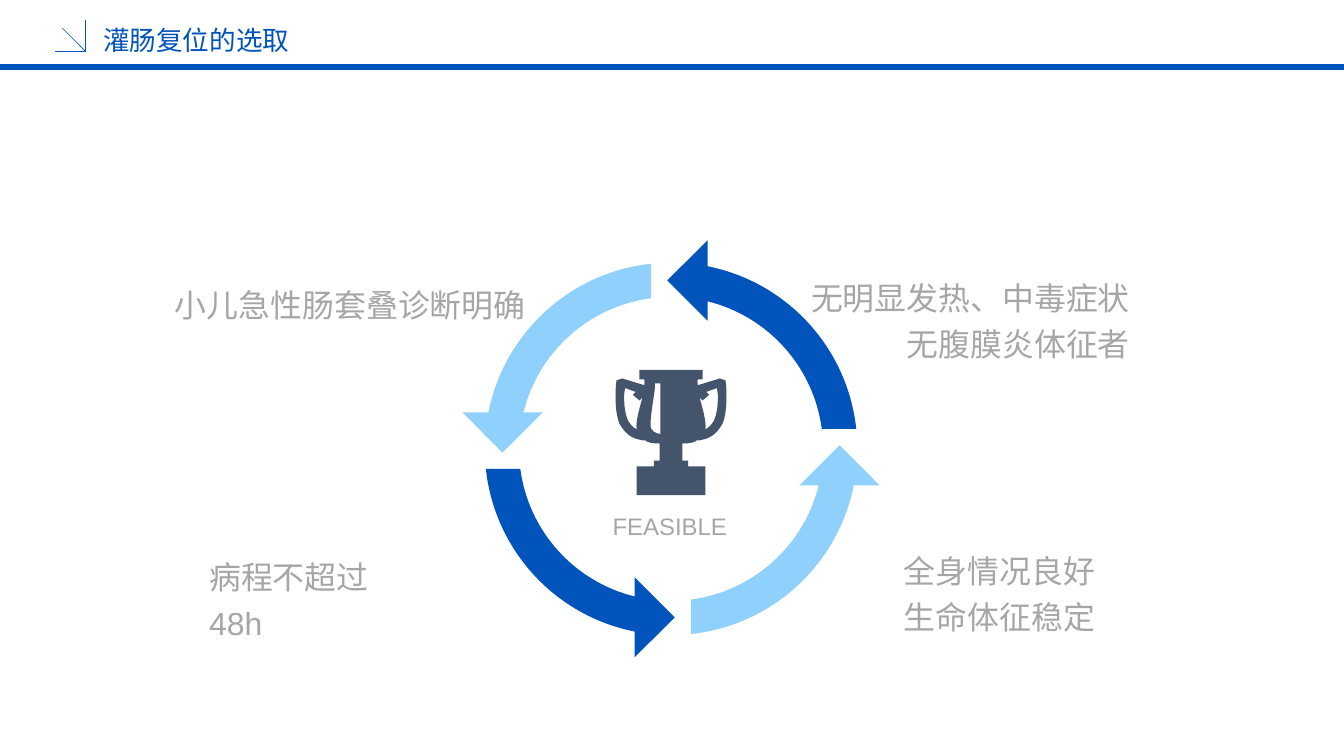
import math

import pptx
import pptx.dml.color
import pptx.enum.shapes
import pptx.enum.text
import pptx.oxml.ns
import pptx.util
from lxml import etree

Cm = pptx.util.Cm
Pt = pptx.util.Pt
qn = pptx.oxml.ns.qn
ALIGN = pptx.enum.text.PP_ALIGN
ANCHOR = pptx.enum.text.MSO_ANCHOR

COLORS = {"blue": "0154BC", "sky": "90D0FD", "slate": "44546A", "gray": "A6A6A6"}
FONT = "Arial"

RING = {"outer": 4.95, "inner": 4.04, "tail": 0.53, "head": 0.97}
ARROWHEAD = [(0.97, -3.41), (-0.1, -4.48), (0.97, -5.54)]
ARROW_TILT = 44.8

CUP_UNIT = Cm(0.0254)
CUP_HALF = [
    (-33, 0), (-33, 10), (-28, 10), (-28, 11, -27, 14, -28, 16),
    (-51, 9), (-57, 11), (-58, 16, -58, 23, -58, 29),
    (-58, 38, -57, 49, -54, 56), (-49, 65, -43, 71, -33, 73),
    (-31, 74, -30, 74, -28, 74), (-28, 73), (-25, 76, -20, 77, -12, 77),
    (-12, 95), (-18, 95), (-18, 101), (-36, 101), (-36, 131),
]
CUP_HANDLE = [
    (-30, 29), (-33, 41, -37, 53, -36, 62), (-39, 61, -42, 58, -45, 53),
    (-48, 46, -49, 38, -49, 29), (-49, 26, -49, 22, -48, 19),
    (-37, 23), (-40, 26), (-33, 32),
]
CUP_HIGHLIGHT = [
    (-11, 14), (-11, 67), (-11, 67, -18, 67, -21, 61),
    (-23, 55, -17, 23, -17, 20), (-17, 14),
]


def color(name):
    return pptx.dml.color.RGBColor.from_string(COLORS[name])


def add_line(slide, start, end, width):
    line = slide.shapes.add_connector(
        pptx.enum.shapes.MSO_CONNECTOR.STRAIGHT,
        Cm(start[0]), Cm(start[1]), Cm(end[0]), Cm(end[1]))
    line.line.color.rgb = color("blue")
    line.line.width = Pt(width)
    etree.SubElement(line._element.spPr, qn("a:effectLst"))


def pairs(step):
    return list(zip(step[::2], step[1::2]))


def join(points):
    return tuple(value for point in points for value in point)


def turn(point, degrees):
    angle = math.radians(degrees)
    x, y = point
    return (x * math.cos(angle) - y * math.sin(angle),
            x * math.sin(angle) + y * math.cos(angle))


def turn_steps(steps, degrees):
    return [join(turn(point, degrees) for point in pairs(step)) for step in steps]


def mirror(steps):
    mirrored = [(-steps[-1][-2], steps[-1][-1])]
    for previous, step in reversed(list(zip(steps, steps[1:]))):
        points = pairs(previous)[-1:] + pairs(step)[:-1]
        mirrored.append(join((-x, y) for x, y in reversed(points)))
    return mirrored


def round_curves(shape, contours):
    segments = iter(list(shape._element.spPr.iter(qn("a:lnTo"))))
    for contour in contours:
        for step in contour[1:]:
            group = [next(segments) for _ in pairs(step)]
            if len(group) == 1:
                continue
            curve = etree.Element(qn("a:cubicBezTo"))
            group[0].addprevious(curve)
            for segment in group:
                curve.append(segment[0])
                segment.getparent().remove(segment)


def add_outline(slide, center_x, top, contours, unit, fill, rotation=0):
    builder = None
    for contour in contours:
        points = [(round(x * unit), round(y * unit))
                  for step in turn_steps(contour, -rotation) for x, y in pairs(step)]
        if builder is None:
            builder = slide.shapes.build_freeform(*points[0], scale=1.0)
        else:
            builder.move_to(*points[0])
        builder.add_line_segments(points[1:])
    shape = builder.convert_to_shape(Cm(center_x), Cm(top))
    round_curves(shape, contours)
    middle = (shape.left + shape.width / 2 - Cm(center_x),
              shape.top + shape.height / 2 - Cm(top))
    x, y = turn(middle, rotation)
    shape.left += round(x - middle[0])
    shape.top += round(y - middle[1])
    shape.rotation = rotation
    shape.shadow.inherit = False
    shape.fill.solid()
    shape.fill.fore_color.rgb = color(fill)
    shape.line.fill.background()


def add_text(slide, box, lines, size, fill="gray", align=ALIGN.LEFT,
             wrap=False, anchor=ANCHOR.TOP):
    frame = slide.shapes.add_textbox(*(Cm(length) for length in box)).text_frame
    frame.word_wrap = wrap
    frame.vertical_anchor = anchor
    frame.margin_left = frame.margin_right = Cm(0.28)
    frame.margin_top = frame.margin_bottom = Cm(0.14)
    frame.text = "\n".join(lines)
    for paragraph in frame.paragraphs:
        paragraph.alignment = align
        paragraph.line_spacing = 1.2
        paragraph.font.name = FONT
        paragraph.font.size = Pt(size)
        paragraph.font.color.rgb = color(fill)


def arc(radius, first, last):
    reach = 4 / 3 * math.tan((last - first) / 4)
    start, end = [(radius * math.sin(angle), -radius * math.cos(angle))
                  for angle in (first, last)]
    return [start, (start[0] - reach * start[1], start[1] + reach * start[0],
                    end[0] + reach * end[1], end[1] - reach * end[0], *end)]


def arc_angles(radius):
    return math.asin(RING["head"] / radius), math.acos(RING["tail"] / radius)


def add_header(slide, left, top, width, height):
    base = top + height
    add_line(slide, (left, base), (left + width, base), 4.5)
    corner = (left + 2.28, top + 1.37)
    for start_x, start_y in [(1.45, 1.37), (2.28, 0.52), (1.65, 0.74)]:
        add_line(slide, (left + start_x, top + start_y), corner, 0.5)
    add_text(slide, (left + 2.46, top + 0.38, 6, 1.2), ["灌肠复位的选取"], 20,
             "blue", wrap=True, anchor=ANCHOR.MIDDLE)


def add_cycle(slide, center_x, center_y):
    outer, inner = RING["outer"], RING["inner"]
    arrow = (arc(outer, *arc_angles(outer))
             + arc(inner, *reversed(arc_angles(inner))) + ARROWHEAD)
    for quarter, fill in enumerate(("blue", "sky", "blue", "sky")):
        add_outline(slide, center_x, center_y, [turn_steps(arrow, 90 * quarter)],
                    Cm(1), fill, ARROW_TILT)


def add_trophy(slide, center_x, top):
    contours = [CUP_HALF + mirror(CUP_HALF), CUP_HANDLE, mirror(CUP_HANDLE), CUP_HIGHLIGHT]
    add_outline(slide, center_x, top, contours, CUP_UNIT, "slate")
    add_text(slide, (center_x - 1.83, top + 3.48, 3.61, 1.2), ["FEASIBLE"], 18,
             align=ALIGN.JUSTIFY)


def add_conditions(slide, left, top):
    conditions = [
        (0, 0.2, 9.93, 1.5, ["小儿急性肠套叠诊断明确"], ALIGN.LEFT, False),
        (0.91, 7.42, 5.6, 2.74, ["病程不超过48h"], ALIGN.LEFT, True),
        (19.35, 7.27, 5.66, 2.74, ["全身情况良好", "生命体征稳定"], ALIGN.RIGHT, False),
        (16.84, 0, 9.09, 2.74, ["无明显发热、中毒症状", "无腹膜炎体征者"], ALIGN.RIGHT, False),
    ]
    for x, y, width, height, lines, align, wrap in conditions:
        add_text(slide, (left + x, top + y, width, height), lines, 24,
                 align=align, wrap=wrap)


def main():
    presentation = pptx.Presentation()
    presentation.slide_width = Cm(35.71)
    presentation.slide_height = Cm(20.09)
    slide = presentation.slides.add_slide(presentation.slide_layouts[6])
    add_header(slide, 0, 0, 35.71, 1.78)
    add_cycle(slide, 17.83, 11.93)
    add_trophy(slide, 17.83, 9.83)
    add_conditions(slide, 4.37, 7.06)
    presentation.save("out.pptx")


if __name__ == "__main__":
    main()
